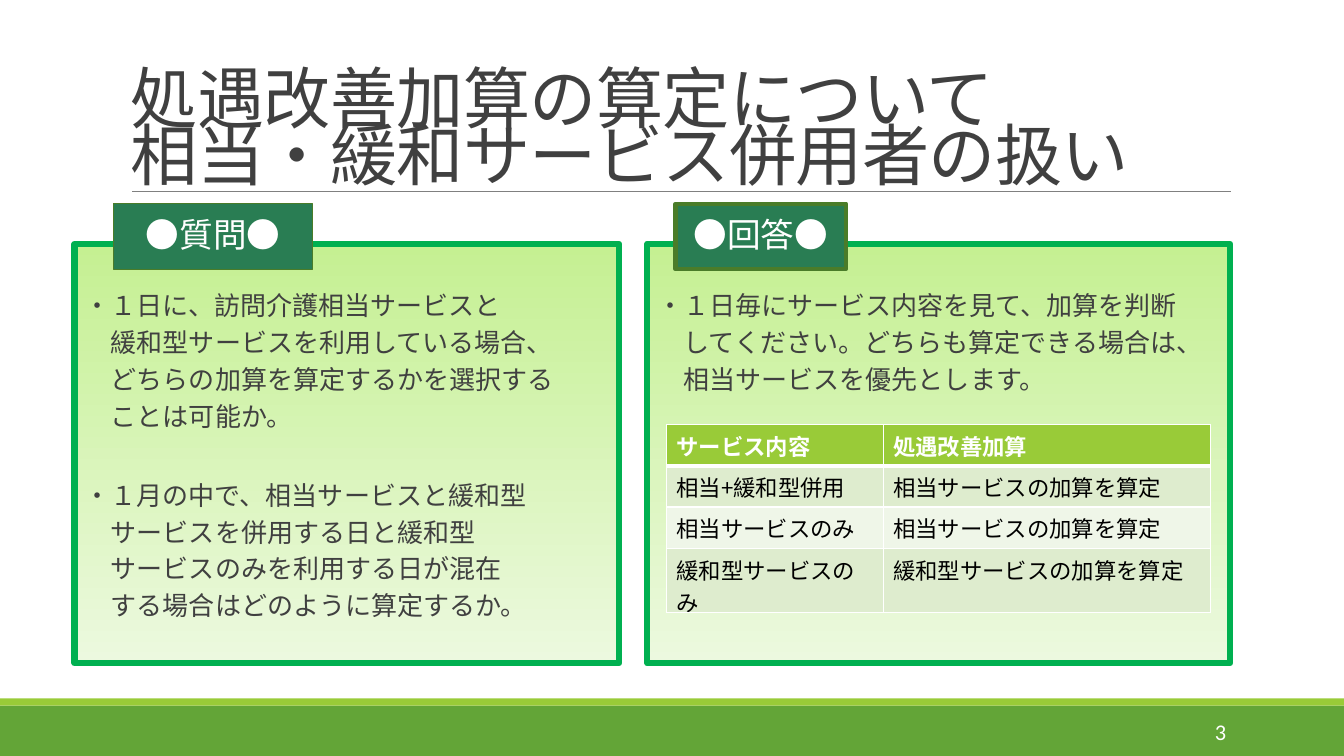
from lxml import etree
from pptx import Presentation
from pptx.dml.color import RGBColor
from pptx.enum.shapes import MSO_CONNECTOR, MSO_SHAPE
from pptx.enum.text import MSO_ANCHOR as ANCHOR, PP_ALIGN as ALIGN
from pptx.oxml.ns import qn
from pptx.util import Inches, Pt

COLORS = {
    "white": "FFFFFF", "black": "000000", "text": "404040", "rule": "808080",
    "footer": "63A537", "accent": "99CB38", "label": "297D53",
    "label_line": "4A7C29", "panel_line": "00B050",
    "panel_top": "C5F092", "panel_bottom": "ECF9DF",
    "row_dark": "DEECCE", "row_light": "EFF6E8",
}
CJK_FONT = "Noto Sans CJK JP"
LINE_GAP, QUESTION_GAP = 8.75, 38.35

QUESTIONS = [
    ["・１日に、訪問介護相当サービスと", "緩和型サービスを利用している場合、",
     "どちらの加算を算定するかを選択する", "ことは可能か。"],
    ["・１月の中で、相当サービスと緩和型", "サービスを併用する日と緩和型",
     "サービスのみを利用する日が混在", "する場合はどのように算定するか。"],
]
ANSWERS = [
    ["・１日毎にサービス内容を見て、加算を判断",
     "してください。どちらも算定できる場合は、", "相当サービスを優先とします。"],
]
TABLE_ROWS = [
    ("サービス内容", "処遇改善加算"),
    ("相当+緩和型併用", "相当サービスの加算を算定"),
    ("相当サービスのみ", "相当サービスの加算を算定"),
    ("緩和型サービスのみ", "緩和型サービスの加算を算定"),
]


def rgb(name):
    return RGBColor.from_string(COLORS[name])


def write_text(paragraph, text, size=16, color="text", font=CJK_FONT, bold=False,
               align=ALIGN.LEFT, spacing=1.0, before=0, after=0, indent=0, tracking=0):
    paragraph.alignment = align
    paragraph.line_spacing = spacing
    paragraph.space_before, paragraph.space_after = Pt(before), Pt(after)
    if indent:
        paragraph._p.get_or_add_pPr().set("marL", str(Inches(indent)))
    for number, line in enumerate(text.split("\n")):
        if number:
            paragraph.add_line_break()
        run = paragraph.add_run()
        run.text = line
        run.font.size, run.font.bold, run.font.name = Pt(size), bold, font
        run.font.color.rgb = rgb(color)
        properties = run._r.get_or_add_rPr()
        etree.SubElement(properties, qn("a:ea")).set("typeface", font)
        if tracking:
            properties.set("spc", str(int(tracking * 100)))


def add_box(slide, left, top, width, height, fill=None, line=None, line_width=1):
    shape = slide.shapes.add_shape(
        MSO_SHAPE.RECTANGLE, Inches(left), Inches(top), Inches(width), Inches(height))
    shape.shadow.inherit = False
    if fill:
        shape.fill.solid()
        shape.fill.fore_color.rgb = rgb(fill)
    if line:
        shape.line.color.rgb = rgb(line)
        shape.line.width = Pt(line_width)
    else:
        shape.line.fill.background()
    return shape


def add_text_box(slide, left, top, width, height, text, anchor, bottom=0.05, **text_format):
    box = slide.shapes.add_textbox(Inches(left), Inches(top), Inches(width), Inches(height))
    frame = box.text_frame
    frame.word_wrap = True
    frame.vertical_anchor = anchor
    frame.margin_bottom = Inches(bottom)
    write_text(frame.paragraphs[0], text, **text_format)


def add_rule(slide, left, right, y):
    rule = slide.shapes.add_connector(
        MSO_CONNECTOR.STRAIGHT, Inches(left), Inches(y), Inches(right), Inches(y))
    rule.line.color.rgb = rgb("rule")
    rule.line.width = Pt(0.5)
    etree.SubElement(rule._element.spPr, qn("a:effectLst"))


def add_panel(slide, left, width, items):
    panel = add_box(slide, left, 2.42, width, 4.16, line="panel_line", line_width=4.5)
    panel.fill.gradient()
    panel.fill.gradient_angle = 270
    for stop, color in zip(panel.fill.gradient_stops, ("panel_top", "panel_bottom")):
        stop.color.rgb = rgb(color)
    frame = panel.text_frame
    frame.word_wrap = True
    frame.vertical_anchor = ANCHOR.TOP
    frame.margin_left = frame.margin_right = 0
    frame.margin_top = Inches(0.54)
    for item_number, lines in enumerate(items):
        for line_number, line in enumerate(lines):
            first = item_number == line_number == 0
            paragraph = frame.paragraphs[0] if first else frame.add_paragraph()
            # Continuation lines align with the text after the dot
            gap = 0 if first else LINE_GAP if line_number else QUESTION_GAP
            write_text(paragraph, line, size=18.6, spacing=0.7, before=gap, after=2,
                       indent=0.36 if line_number else 0.1)


def add_label(slide, left, width, text, line_width):
    label = add_box(slide, left, 2.02, width, 0.65, "label", "label_line", line_width)
    label.text_frame.vertical_anchor = ANCHOR.MIDDLE
    write_text(label.text_frame.paragraphs[0], text, size=24, color="white",
               align=ALIGN.CENTER, spacing=0.9)


def set_borders(cell, widths):
    properties = cell._tc.get_or_add_tcPr()
    for position, (side, width) in enumerate(widths.items()):
        border = etree.Element(qn("a:" + side), w=str(Pt(width)))
        fill = etree.SubElement(border, qn("a:solidFill"))
        etree.SubElement(fill, qn("a:srgbClr"), val=COLORS["white"])
        properties.insert(position, border)


def add_service_table(slide):
    table = slide.shapes.add_table(
        len(TABLE_ROWS), 2, Inches(6.61), Inches(4.21), Inches(5.4), Inches(1.64)).table
    for column, width in zip(table.columns, (2.15, 3.25)):
        column.width = Inches(width)
    for row_number, texts in enumerate(TABLE_ROWS):
        header = row_number == 0
        fill = "accent" if header else "row_dark" if row_number % 2 else "row_light"
        widths = {"lnL": 1, "lnR": 1, "lnT": 3 if row_number == 1 else 1,
                  "lnB": 3 if header else 1}
        for column_number, text in enumerate(texts):
            cell = table.cell(row_number, column_number)
            cell.fill.solid()
            cell.fill.fore_color.rgb = rgb(fill)
            set_borders(cell, widths)
            write_text(cell.text_frame.paragraphs[0], text, bold=header,
                       color="white" if header else "black")


def main():
    presentation = Presentation()
    presentation.slide_width, presentation.slide_height = Inches(13.33), Inches(7.5)
    slide = presentation.slides.add_slide(presentation.slide_layouts[6])

    # Footer bands and title rule
    add_box(slide, 0, 7, 13.33, 0.5, "footer")
    add_box(slide, 0, 6.93, 13.33, 0.07, "accent")
    add_rule(slide, 1.31, 12.21, 1.9)

    # Title
    add_text_box(slide, 1.2, 0.31, 11, 1.59,
                 "処遇改善加算の算定について\n相当・緩和サービス併用者の扱い",
                 ANCHOR.BOTTOM, bottom=0, size=48, spacing=0.7, tracking=-0.5)

    # Question and answer
    add_panel(slide, 0.74, 5.4, QUESTIONS)
    add_label(slide, 1.13, 1.97, "●質問●", 0.75)
    add_panel(slide, 6.42, 5.78, ANSWERS)
    add_label(slide, 6.7, 1.69, "●回答●", 3)
    add_service_table(slide)

    # Slide number
    add_text_box(slide, 10.83, 7.06, 1.43, 0.4, "3", ANCHOR.MIDDLE, size=16,
                 color="white", font="Calibri", align=ALIGN.RIGHT)
    presentation.save("out.pptx")


if __name__ == "__main__":
    main()
